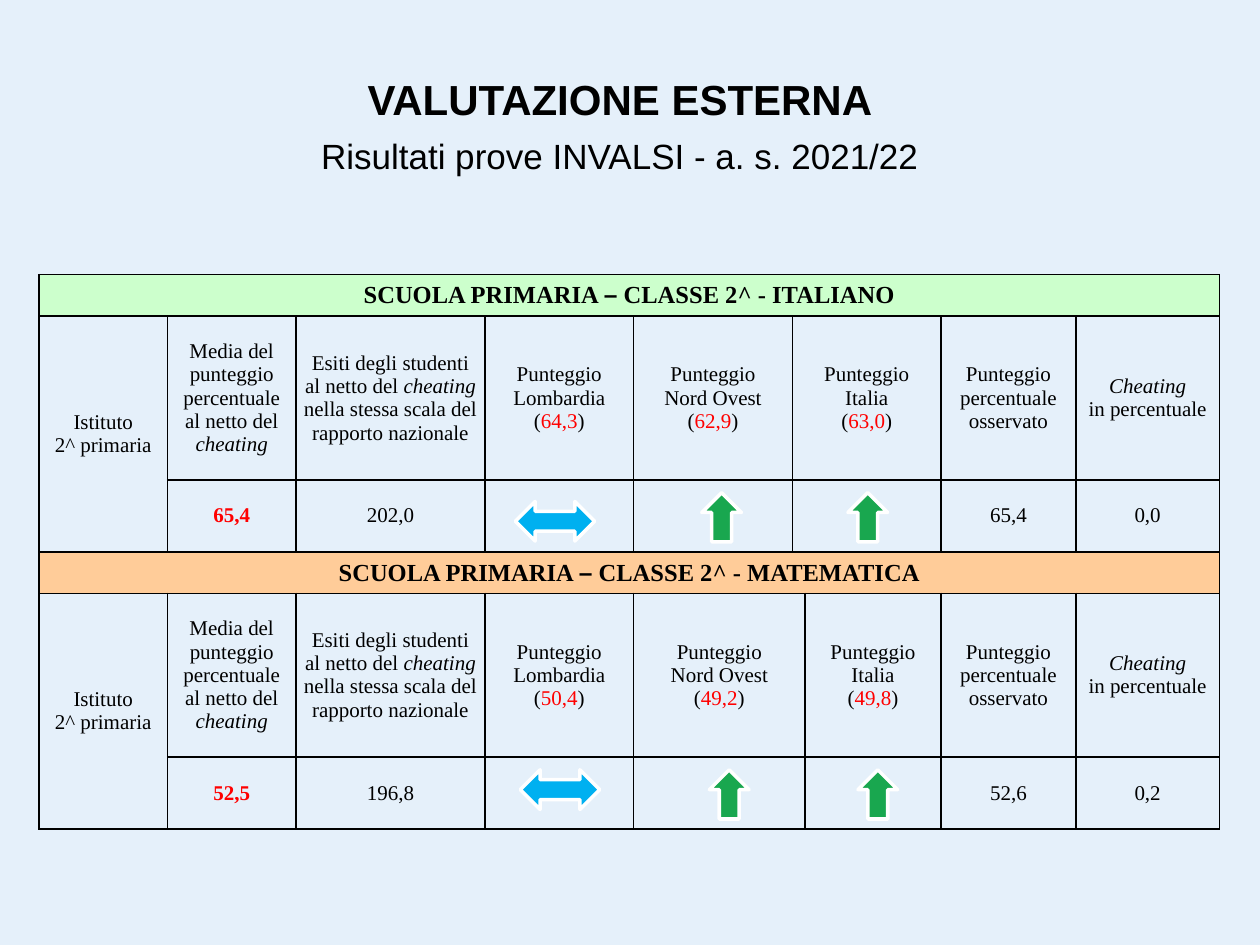
from copy import deepcopy

from lxml import etree
from pptx import Presentation
from pptx import util as u
from pptx.dml.color import RGBColor
from pptx.enum import shapes, text
from pptx.oxml.ns import qn

SERIF, SANS = "Times New Roman", "Arial"
BLACK, WHITE, RED = "000000", "FFFFFF", "FF0000"
GREEN, BLUE = "19A74F", "00B0F0"


def rgb(value):
    return RGBColor.from_string(value)


class Sheet:
    """The current slide, on a grid of 100 columns by 75 rows of 0.1 inch."""

    def __init__(self, deck, background):
        deck.slide_width, deck.slide_height = self.grid(100), self.grid(75)
        self.slide = deck.slides.add_slide(deck.slide_layouts[5])
        self.slide.background.fill.solid()
        self.slide.background.fill.fore_color.rgb = rgb(background)

    @staticmethod
    def grid(units):
        return u.Inches(units / 10)

    @staticmethod
    def style(run, size, font=SERIF, color=BLACK, bold=False, italic=False):
        run.font.size, run.font.name = u.Pt(size), font
        run.font.bold, run.font.italic = bold, italic
        run.font.color.rgb = rgb(color)

    def title(self, box, lines):
        heading = self.slide.shapes.title
        heading.left, heading.top, heading.width, heading.height = map(self.grid, box)
        frame = heading.text_frame
        frame.text = "\n".join(line for line, _, _ in lines)
        frame.vertical_anchor = text.MSO_ANCHOR.MIDDLE
        for paragraph, (_, size, bold) in zip(frame.paragraphs, lines):
            paragraph.alignment = text.PP_ALIGN.CENTER
            paragraph.space_before = u.Pt(0)
            self.style(paragraph.runs[0], size, SANS, bold=bold)
        frame.paragraphs[-1].space_before = u.Pt(6)

    def table(self, left, top, columns, rows):
        frame = self.slide.shapes.add_table(
            len(rows), len(columns), *map(self.grid, (left, top, sum(columns), sum(rows))))
        table = frame.table
        table.first_row = table.horz_banding = False
        for column, width in zip(table.columns, columns):
            column.width = self.grid(width)
        for row, height in zip(table.rows, rows):
            row.height = self.grid(height)
        for cell in table.iter_cells():
            self.border(cell)
            cell.fill.background()
        return table

    @staticmethod
    def border(cell):
        properties = cell._tc.get_or_add_tcPr()
        for side in ("lnL", "lnR", "lnT", "lnB"):
            line = etree.SubElement(properties, qn(f"a:{side}"), w=str(u.Pt(1)))
            fill = etree.SubElement(line, qn("a:solidFill"))
            etree.SubElement(fill, qn("a:srgbClr"), val=BLACK)

    def label(self, cell, words, size=12, fill=None, bold=False, **accent):
        """Fill a cell; words between asterisks get the accent, \\v breaks a line."""
        cell.margin_left = cell.margin_right = self.grid(0.5)
        cell.margin_top = cell.margin_bottom = self.grid(0.5)
        cell.vertical_anchor = text.MSO_ANCHOR.MIDDLE
        if fill:
            cell.fill.solid()
            cell.fill.fore_color.rgb = rgb(fill)
        cell.text_frame.text = words.replace("*", "")
        for paragraph, line in zip(cell.text_frame.paragraphs, words.split("\n")):
            paragraph.clear()
            paragraph.alignment = text.PP_ALIGN.CENTER
            for place, part in enumerate(line.split("*")):
                look = {"bold": bold, **(accent if place % 2 else {})}
                for number, piece in enumerate(part.split("\v")):
                    if number:
                        paragraph.add_line_break()
                    if piece:
                        run = paragraph.add_run()
                        run.text = piece
                        self.style(run, size, **look)
            # Line breaks take the text size, so that lines keep their height
            for line_break in paragraph._p.findall(qn("a:br")):
                line_break.append(deepcopy(paragraph.runs[0].font._element))

    def arrow(self, kind, left, top, width, height, fill):
        arrow = self.slide.shapes.add_shape(kind, *map(self.grid, (left, top, width, height)))
        arrow.shadow.inherit = False
        arrow.fill.solid()
        arrow.fill.fore_color.rgb = rgb(fill)
        arrow.line.color.rgb = rgb(WHITE)
        arrow.line.width = u.Pt(2)


def subject_block(sheet, table, first, subject, fill, split, areas, results):
    """One subject: a band, the column headings and the results."""
    band, heads, values = first, first + 1, first + 2
    north_west, italy = split

    # Merged cells
    table.cell(band, 0).merge(table.cell(band, 8))
    table.cell(heads, 0).merge(table.cell(values, 0))
    wide = 4 if italy == 6 else 5
    for row in (heads, values):
        table.cell(row, wide).merge(table.cell(row, wide + 1))

    # Band and headings
    sheet.label(table.cell(band, 0), f"SCUOLA PRIMARIA *–* CLASSE 2^ - {subject}",
                size=14, fill=fill, bold=True, font=SANS)
    headings = {
        0: "Istituto\n2^ primaria",
        1: "Media del punteggio\vpercentuale al netto del *cheating*",
        2: "Esiti degli studenti\val netto del *cheating\v*nella stessa scala del rapporto nazionale",
        7: "Punteggio percentuale osservato",
        8: "*Cheating\v*in percentuale",
    }
    for column, words in headings.items():
        sheet.label(table.cell(heads, column), words, italic=True)
    names = ("Lombardia", "Nord Ovest", "Italia")
    for column, name, score in zip((3, north_west, italy), names, areas):
        sheet.label(table.cell(heads, column), f"Punteggio\v{name}\v(*{score}*)", color=RED)

    # Results
    for column, score in zip((1, 2, 7, 8), results):
        words = f"*{score}*" if column == 1 else score
        sheet.label(table.cell(values, column), words, color=RED, bold=column == 1)


def main():
    deck = Presentation()
    sheet = Sheet(deck, "E5F0FA")

    # Title
    sheet.title((6.7, 5.2, 85, 9.4), [
        ("VALUTAZIONE ESTERNA", 24, True),
        ("Risultati prove INVALSI - a. s. 2021/22", 20, False),
    ])

    # Results table
    results = sheet.table(3.1, 21.8,
                          (10.2, 10.2, 15, 11.8, 12.6, 1, 10.8, 10.7, 11.4),
                          (3.3, 13, 5.7) * 2)
    subject_block(sheet, results, 0, "ITALIANO", "CCFFCC", (4, 5),
                  ("64,3", "62,9", "63,0"), ("65,4", "202,0", "65,4", "0,0"))
    subject_block(sheet, results, 3, "MATEMATICA", "FFCC99", (4, 6),
                  ("50,4", "49,2", "49,8"), ("52,5", "196,8", "52,6", "0,2"))

    # Comparison arrows: above the area, or level with it
    for left, top in ((67.3, 39.1), (55.7, 39.1), (68.1, 61.1), (56.3, 61.1)):
        sheet.arrow(shapes.MSO_SHAPE.UP_ARROW, left, top, 3.15, 3.9, GREEN)
    for left, top in ((40.9, 39.8), (41.3, 61.1)):
        sheet.arrow(shapes.MSO_SHAPE.LEFT_RIGHT_ARROW, left, top, 6.3, 3.15, BLUE)

    deck.save("out.pptx")


if __name__ == "__main__":
    main()
